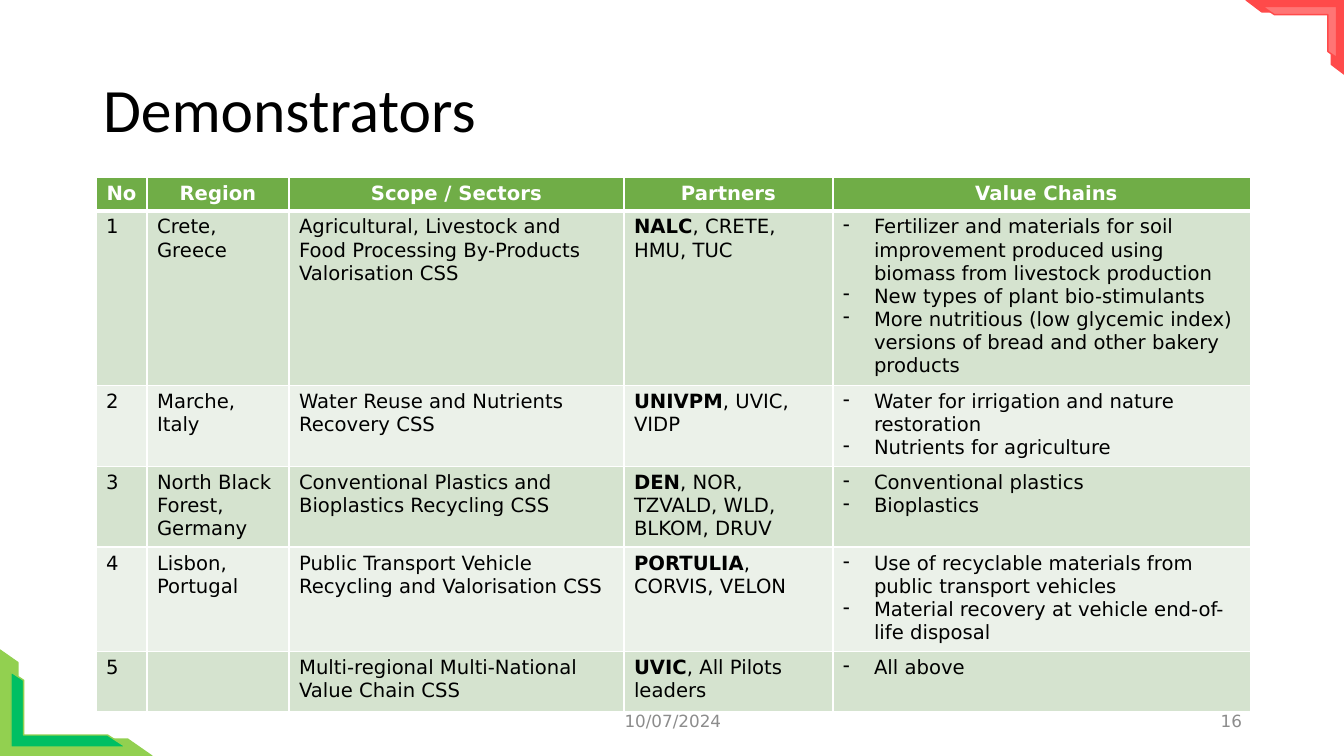
from pptx import Presentation
from pptx.dml.color import RGBColor
from pptx.enum.shapes import MSO_SHAPE
from pptx.enum.text import MSO_ANCHOR, PP_ALIGN
from pptx.oxml.ns import qn
from pptx.util import Pt
from lxml import etree

LEFT, CENTER, RIGHT = PP_ALIGN.LEFT, PP_ALIGN.CENTER, PP_ALIGN.RIGHT
TOP, MIDDLE = MSO_ANCHOR.TOP, MSO_ANCHOR.MIDDLE
HALF_FRAME = MSO_SHAPE.HALF_FRAME

EMU_PER_PX = 12192000 / 1344
TITLE_ONLY = 5
TITLE_FONT, BODY_FONT = "Calibri", "DejaVu Sans"
BLACK, WHITE, GREY = "000000", "FFFFFF", "8C8C8C"
HEADER_GREEN, BAND_DARK, BAND_LIGHT = "70AD47", "D5E3CF", "EBF1E9"
BULLET_INDENT = 31

COLUMN_WIDTHS = [51, 142, 335, 209, 418]
ROW_HEIGHTS = [33, 171, 79, 80, 101, 60]
HEADERS = ["No", "Region", "Scope / Sectors", "Partners", "Value Chains"]
# Region, scope, lead partner, other partners, value chains
DEMONSTRATORS = [
    ("Crete, Greece",
     "Agricultural, Livestock and Food Processing By-Products Valorisation CSS",
     "NALC", ", CRETE, HMU, TUC",
     ["Fertilizer and materials for soil improvement produced using biomass "
      "from livestock production",
      "New types of plant bio-stimulants",
      "More nutritious (low glycemic index) versions of bread and other "
      "bakery products"]),
    ("Marche, Italy", "Water Reuse and Nutrients Recovery CSS",
     "UNIVPM", ", UVIC, VIDP",
     ["Water for irrigation and nature restoration",
      "Nutrients for agriculture"]),
    ("North Black Forest, Germany",
     "Conventional Plastics and Bioplastics Recycling CSS",
     "DEN", ", NOR, TZVALD, WLD, BLKOM, DRUV",
     ["Conventional plastics", "Bioplastics"]),
    ("Lisbon, Portugal",
     "Public Transport Vehicle Recycling and Valorisation CSS",
     "PORTULIA", ", CORVIS, VELON",
     ["Use of recyclable materials from public transport vehicles",
      "Material recovery at vehicle end-of-life disposal"]),
    ("", "Multi-regional Multi-National Value Chain CSS",
     "UVIC", ", All Pilots leaders", ["All above"]),
]

# Left, top, width, height, rotation, fill, line
CORNER_FRAMES = [
    (23, 627, 106, 152, 270, "92D050", "92D050"),
    (31, 652, 75, 115, 270, "00BF63", "92D050"),
    (1258, -12, 74, 98, 90, "FF4A4A", "FF4B4B"),
    (1274, -5, 51, 74, 90, "FF7575", "FF4A4A"),
]


def px(length):
    return round(length * EMU_PER_PX)


def color(hex_string):
    return RGBColor.from_string(hex_string)


def format_runs(paragraph, size, hex_color, font_name=BODY_FONT, bold=False):
    for run in paragraph.runs:
        run.font.size = Pt(size)
        run.font.name = font_name
        run.font.bold = bold
        run.font.color.rgb = color(hex_color)


def set_title(slide, text):
    title = slide.shapes.title
    title.left, title.top, title.width, title.height = map(px, (93, 40, 1159, 146))
    frame = title.text_frame
    frame.text = text
    frame.vertical_anchor = MIDDLE
    paragraph = frame.paragraphs[0]
    paragraph.alignment = LEFT
    paragraph.line_spacing = 0.9
    format_runs(paragraph, 44, BLACK, TITLE_FONT)


def add_footer(slide, text, left, width, alignment):
    box = slide.shapes.add_textbox(px(left), px(701), px(width), px(40))
    frame = box.text_frame
    frame.word_wrap = True
    frame.vertical_anchor = MIDDLE
    frame.text = text
    frame.paragraphs[0].alignment = alignment
    format_runs(frame.paragraphs[0], 12, GREY)


def set_borders(cell, top=1, bottom=1):
    properties = cell._tc.get_or_add_tcPr()
    for side, width in (("L", 1), ("R", 1), ("T", top), ("B", bottom)):
        line = etree.SubElement(properties, qn(f"a:ln{side}"), w=str(Pt(width)))
        fill = etree.SubElement(line, qn("a:solidFill"))
        etree.SubElement(fill, qn("a:srgbClr"), val=WHITE)


def set_indent(paragraph, margin, first_line=0):
    properties = paragraph._p.get_or_add_pPr()
    properties.set("marL", str(px(margin)))
    properties.set("indent", str(px(first_line)))
    return properties


def add_dash(paragraph):
    properties = set_indent(paragraph, BULLET_INDENT, -BULLET_INDENT)
    etree.SubElement(properties, qn("a:buChar"), char="-")


def fill_cell(cell, lines, hex_fill, hex_text=BLACK, bold=False, anchor=TOP):
    cell.fill.solid()
    cell.fill.fore_color.rgb = color(hex_fill)
    cell.vertical_anchor = anchor
    cell.text_frame.text = "\n".join(lines)
    for paragraph in cell.text_frame.paragraphs:
        format_runs(paragraph, 14, hex_text, bold=bold)


def add_header_row(table):
    for cell, label in zip(table.rows[0].cells, HEADERS):
        set_borders(cell, bottom=3)
        fill_cell(cell, [label], HEADER_GREEN, WHITE, True, MIDDLE)
        cell.text_frame.paragraphs[0].alignment = CENTER
    set_indent(table.cell(0, 4).text_frame.paragraphs[0], 9)


def add_demonstrator_row(table, number, demonstrator):
    region, scope, lead, others, chains = demonstrator
    band = BAND_DARK if number % 2 else BAND_LIGHT
    cells = list(table.rows[number].cells)
    contents = [[str(number)], [region], [scope], [others], chains]
    for cell, lines in zip(cells, contents):
        set_borders(cell, top=3 if number == 1 else 1)
        fill_cell(cell, lines, band)
    # Lead partner in bold, the others after it
    partners = cells[3].text_frame.paragraphs[0]
    partners.text = lead
    partners.add_run().text = others
    format_runs(partners, 14, BLACK)
    partners.runs[0].font.bold = True
    for paragraph in cells[4].text_frame.paragraphs:
        add_dash(paragraph)


def add_demonstrator_table(slide):
    frame = slide.shapes.add_table(
        len(ROW_HEIGHTS), len(COLUMN_WIDTHS), px(96), px(177),
        px(sum(COLUMN_WIDTHS)), px(sum(ROW_HEIGHTS)))
    table = frame.table
    for column, width in zip(table.columns, COLUMN_WIDTHS):
        column.width = px(width)
    for row, height in zip(table.rows, ROW_HEIGHTS):
        row.height = px(height)
    add_header_row(table)
    for number, demonstrator in enumerate(DEMONSTRATORS, start=1):
        add_demonstrator_row(table, number, demonstrator)


def add_corner_frame(slide, left, top, width, height, rotation, fill, line):
    shape = slide.shapes.add_shape(
        HALF_FRAME, px(left), px(top), px(width), px(height))
    shape.rotation = rotation
    shape.adjustments[0], shape.adjustments[1] = 0.17, 0.16
    shape.shadow.inherit = False
    shape.fill.solid()
    shape.fill.fore_color.rgb = color(fill)
    shape.line.color.rgb = color(line)
    shape.line.width = Pt(1)


def main():
    presentation = Presentation()
    presentation.slide_width, presentation.slide_height = px(1344), px(756)
    slide = presentation.slides.add_slide(presentation.slide_layouts[TITLE_ONLY])

    # Title and footer
    set_title(slide, "Demonstrators")
    add_footer(slide, "10/07/2024", 446, 454, CENTER)
    add_footer(slide, "16", 950, 302, RIGHT)

    # Table and corner decoration
    add_demonstrator_table(slide)
    for corner_frame in CORNER_FRAMES:
        add_corner_frame(slide, *corner_frame)

    presentation.save("out.pptx")


if __name__ == "__main__":
    main()
